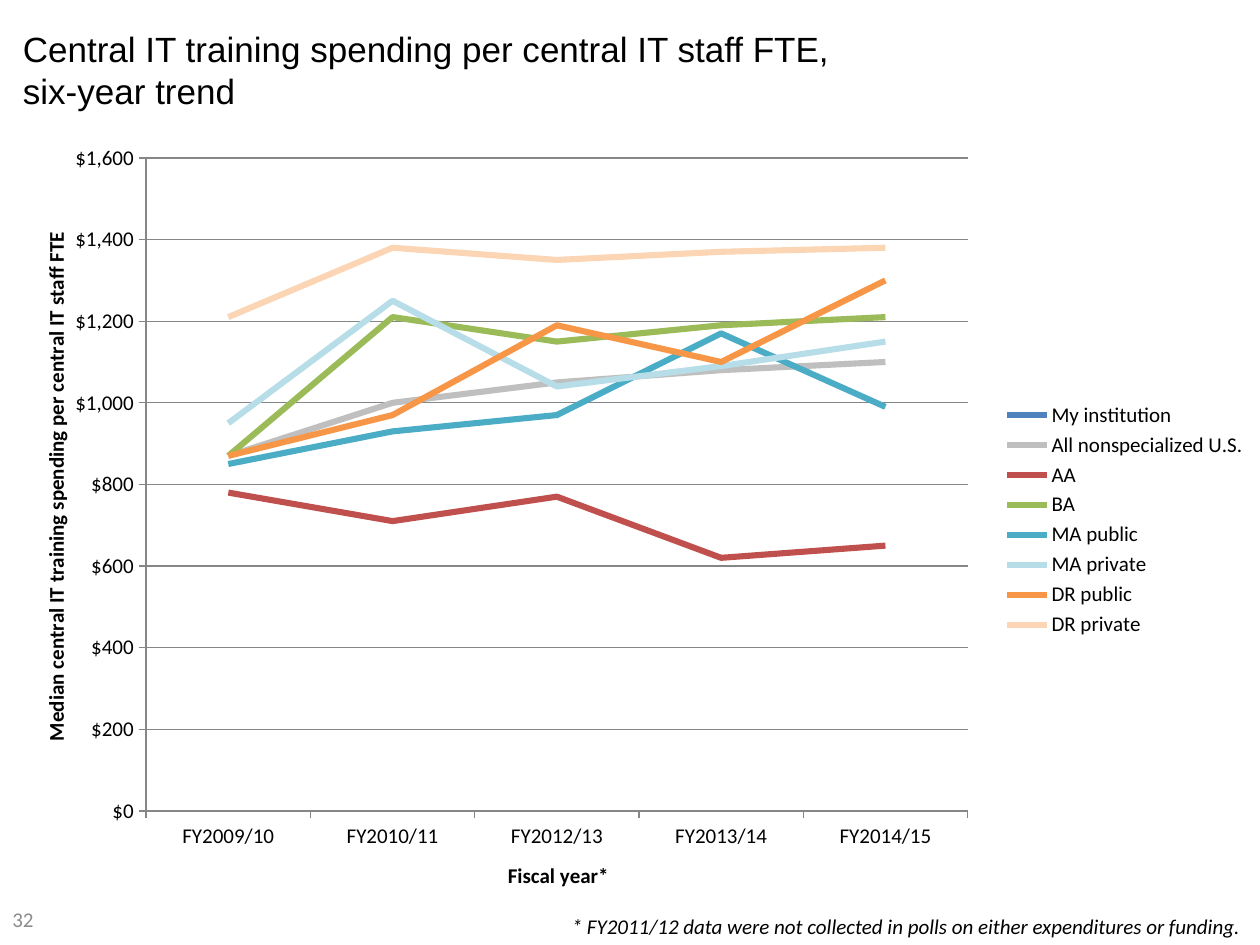
import lxml.etree
import pptx
import pptx.chart.data
import pptx.dml.color
import pptx.enum.chart
import pptx.enum.text
import pptx.oxml.ns
import pptx.util

Pt = pptx.util.Pt
COLORS = {
    "text": "000000",
    "muted": "8C8C8C",
    "axis": "868686",
    "My institution": "4F81BD",
    "All nonspecialized U.S.": "BFBFBF",
    "AA": "C0504D",
    "BA": "9BBB59",
    "MA public": "4BACC6",
    "MA private": "B7DEE8",
    "DR public": "F79646",
    "DR private": "FCD5B5",
}
YEARS = ["FY2009/10", "FY2010/11", "FY2012/13", "FY2013/14", "FY2014/15"]
SPENDING = {
    "My institution": [None] * len(YEARS),
    "All nonspecialized U.S.": [870, 1000, 1050, 1080, 1100],
    "AA": [780, 710, 770, 620, 650],
    "BA": [870, 1210, 1150, 1190, 1210],
    "MA public": [850, 930, 970, 1170, 990],
    "MA private": [950, 1250, 1040, 1090, 1150],
    "DR public": [870, 970, 1190, 1100, 1300],
    "DR private": [1210, 1380, 1350, 1370, 1380],
}


def rgb(name):
    return pptx.dml.color.RGBColor.from_string(COLORS[name])


class SlideBuilder:
    """Holds the text style and the current slide."""

    def __init__(self, slide, font="Calibri", size=12):
        self.slide = slide
        self.font = font
        self.size = size

    def style_font(self, font, color="text", name=None, size=None, **flags):
        font.name = name or self.font
        font.size = Pt(size or self.size)
        font.color.rgb = rgb(color)
        for flag, value in flags.items():
            setattr(font, flag, value)

    def text(self, box, lines, align="LEFT", anchor="TOP", **style):
        shape = self.slide.shapes.add_textbox(*map(Pt, box))
        frame = shape.text_frame
        frame.word_wrap = True
        frame.vertical_anchor = pptx.enum.text.MSO_ANCHOR[anchor]
        paragraph = frame.paragraphs[0]
        paragraph.alignment = pptx.enum.text.PP_ALIGN[align]
        for index, line in enumerate(lines):
            if index:
                paragraph.add_line_break()
            run = paragraph.add_run()
            run.text = line
            self.style_font(run.font, **style)

    def place(self, element, position, **settings):
        """Fix a chart part at fractions of the chart."""
        qn = pptx.oxml.ns.qn
        for old in element.findall(qn("c:layout")):
            element.remove(old)
        layout = lxml.etree.Element(qn("c:layout"))
        element.insert(position, layout)
        manual = lxml.etree.SubElement(layout, qn("c:manualLayout"))
        for tag, value in settings.items():
            lxml.etree.SubElement(manual, qn("c:" + tag)).set("val", str(value))

    def style_axis(self, axis, title, left, top):
        axis.major_tick_mark = pptx.enum.chart.XL_TICK_MARK.OUTSIDE
        axis.minor_tick_mark = pptx.enum.chart.XL_TICK_MARK.NONE
        axis.format.line.color.rgb = rgb("axis")
        axis.format.line.width = Pt(0.75)
        self.style_font(axis.tick_labels.font)
        run = axis.axis_title.text_frame.paragraphs[0].add_run()
        run.text = title
        self.style_font(run.font, bold=True)
        self.place(axis.axis_title._element, 1, xMode="edge", yMode="edge", x=left, y=top)

    def line_chart(self, box, categories, series_values, category_title, value_title):
        data = pptx.chart.data.CategoryChartData(number_format='"$"#,##0')
        data.categories = categories
        for name, values in series_values.items():
            data.add_series(name, values)
        chart = self.slide.shapes.add_chart(
            pptx.enum.chart.XL_CHART_TYPE.LINE, *map(Pt, box), data).chart
        self.style_font(chart.font)
        chart.has_title = False
        plot = chart.plots[0]
        plot.vary_by_categories = False

        # Series
        for series in plot.series:
            series.smooth = False
            series.marker.style = pptx.enum.chart.XL_MARKER_STYLE.NONE
            series.format.line.color.rgb = rgb(series.name)
            series.format.line.width = Pt(3.5)

        # Axes
        self.style_axis(chart.category_axis, category_title, left=0.4, top=0.94)
        axis = chart.value_axis
        self.style_axis(axis, value_title, left=0.03, top=0.12)
        axis.minimum_scale, axis.maximum_scale, axis.major_unit = 0, 1600, 200
        axis.tick_labels.number_format = '"$"#,##0'
        axis.tick_labels.number_format_is_linked = False
        axis.has_major_gridlines = True
        axis.major_gridlines.format.line.color.rgb = rgb("axis")
        axis.major_gridlines.format.line.width = Pt(0.75)

        # Legend and plot area
        chart.has_legend = True
        chart.legend.position = pptx.enum.chart.XL_LEGEND_POSITION.RIGHT
        chart.legend.include_in_layout = False
        self.style_font(chart.legend.font)
        self.place(plot._element.getparent(), 0, layoutTarget="inner",
                   xMode="edge", yMode="edge", x=0.116, y=0.028, w=0.652, h=0.852)


def main():
    presentation = pptx.Presentation()
    presentation.slide_width, presentation.slide_height = Pt(720), Pt(540)
    slide = presentation.slides.add_slide(presentation.slide_layouts[6])
    builder = SlideBuilder(slide)

    # Title
    builder.text((6, 12, 673, 72),
                 ["Central IT training spending per central IT staff FTE,", "six-year trend"],
                 name="Arial", size=20)

    # Spending trend
    builder.line_chart((0, 78, 720, 438), YEARS, SPENDING, "Fiscal year*",
                       "Median central IT training spending per central IT staff FTE")

    # Page number and footnote
    builder.text((0, 510, 78, 30), ["32"], anchor="MIDDLE", color="muted")
    builder.text((32, 518.5, 684, 21.5),
                 ["* FY2011/12 data were not collected in polls on either expenditures or funding."],
                 align="RIGHT", italic=True)

    presentation.save("out.pptx")


if __name__ == "__main__":
    main()
